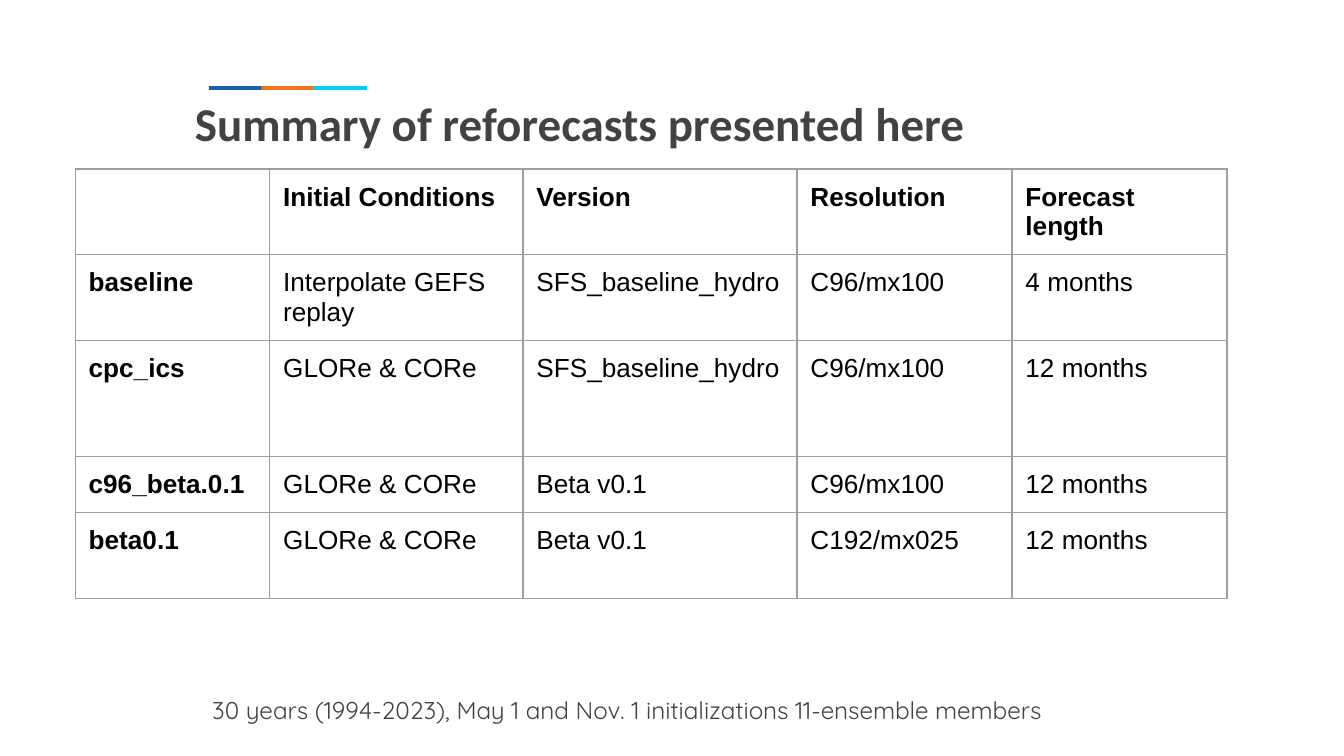
from lxml import etree
from pptx import Presentation
from pptx.dml.color import RGBColor
from pptx.enum.shapes import MSO_CONNECTOR as Connector
from pptx.enum.text import MSO_ANCHOR as Anchor, MSO_AUTO_SIZE as AutoSize, PP_ALIGN as Align
from pptx.oxml import parse_xml
from pptx.oxml.ns import nsdecls, qn
from pptx.util import Pt

COLORS = {
    "blue": "145FA6",
    "orange": "F1761A",
    "cyan": "00C9FF",
    "border": "9E9E9E",
    "black": "000000",
    "gray": "424242",
}
INSET = 7.2


def write_text(frame, text, font="Arial", size=14, color="black", bold=False):
    frame.word_wrap = True
    paragraph = frame.paragraphs[0]
    paragraph.alignment = Align.LEFT
    run = paragraph.add_run()
    run.text = text
    run.font.name = font
    run.font.size = Pt(size)
    run.font.bold = bold
    run.font.color.rgb = RGBColor.from_string(COLORS[color])


def set_margins(target):
    target.margin_left = target.margin_right = Pt(INSET)
    target.margin_top = target.margin_bottom = Pt(INSET)


class SlideBuilder:
    def __init__(self, slide):
        self.slide = slide

    def title(self, text, left, top, width, height, **text_format):
        shape = self.slide.shapes.title
        shape.left, shape.top = Pt(left), Pt(top)
        shape.width, shape.height = Pt(width), Pt(height)
        frame = shape.text_frame
        set_margins(frame)
        frame.auto_size = AutoSize.NONE
        frame.vertical_anchor = Anchor.MIDDLE
        write_text(frame, text, **text_format)

    def text(self, text, left, top, width, height, **text_format):
        shape = self.slide.shapes.add_textbox(Pt(left), Pt(top), Pt(width), Pt(height))
        set_margins(shape.text_frame)
        shape.text_frame.auto_size = AutoSize.SHAPE_TO_FIT_TEXT
        write_text(shape.text_frame, text, **text_format)

    def line(self, left, top, length, color):
        line = self.slide.shapes.add_connector(
            Connector.STRAIGHT, Pt(left), Pt(top), Pt(left + length), Pt(top))
        line.line.color.rgb = RGBColor.from_string(COLORS[color])
        line.line.width = Pt(2.25)
        etree.SubElement(line._element.spPr, qn("a:effectLst"))

    def border(self, cell):
        properties = cell._tc.get_or_add_tcPr()
        for index, side in enumerate(("lnL", "lnR", "lnT", "lnB")):
            properties.insert(index, parse_xml(
                f'<a:{side} {nsdecls("a")} w="{Pt(0.75)}"><a:solidFill>'
                f'<a:srgbClr val="{COLORS["border"]}"/></a:solidFill></a:{side}>'))

    def table(self, rows, left, top, widths, heights):
        table = self.slide.shapes.add_table(
            len(rows), len(widths), Pt(left), Pt(top),
            Pt(sum(widths)), Pt(sum(heights))).table
        table.first_row = table.horz_banding = False
        for column, width in zip(table.columns, widths):
            column.width = Pt(width)
        for row_index, (values, height) in enumerate(zip(rows, heights)):
            table.rows[row_index].height = Pt(height)
            for column_index, value in enumerate(values):
                cell = table.cell(row_index, column_index)
                set_margins(cell)
                cell.fill.background()
                self.border(cell)
                if value:
                    is_header = row_index == 0 or column_index == 0
                    write_text(cell.text_frame, value, bold=is_header)


REFORECASTS = [
    ("", "Initial Conditions", "Version", "Resolution", "Forecast length"),
    ("baseline", "Interpolate GEFS replay", "SFS_baseline_hydro", "C96/mx100", "4 months"),
    ("cpc_ics", "GLORe & CORe", "SFS_baseline_hydro", "C96/mx100", "12 months"),
    ("c96_beta.0.1", "GLORe & CORe", "Beta v0.1", "C96/mx100", "12 months"),
    ("beta0.1", "GLORe & CORe", "Beta v0.1", "C192/mx025", "12 months"),
]


def main():
    presentation = Presentation()
    presentation.slide_width, presentation.slide_height = Pt(720), Pt(405)
    builder = SlideBuilder(presentation.slides.add_slide(presentation.slide_layouts[5]))

    # Three-colour accent rule above the title
    segment = 28.2
    for index, color in enumerate(("blue", "orange", "cyan")):
        builder.line(111.8 + index * segment, 47, segment, color)

    # Title
    builder.title("Summary of reforecasts presented here", 97.2, 41.8, 553.7, 47.5,
                  font="Calibri", size=25.2, color="gray", bold=True)

    # Reforecast table
    builder.table(REFORECASTS, 40.3, 90.5,
                  widths=(104.2, 135.7, 146.8, 115.2, 115.2),
                  heights=(46, 46, 62, 30, 46))

    # Footnote
    builder.text("30 years (1994-2023), May 1 and Nov. 1 initializations 11-ensemble members",
                 106.6, 365, 473.8, 30.2, font="Quicksand", size=13, color="gray")

    presentation.save("out.pptx")


if __name__ == "__main__":
    main()
